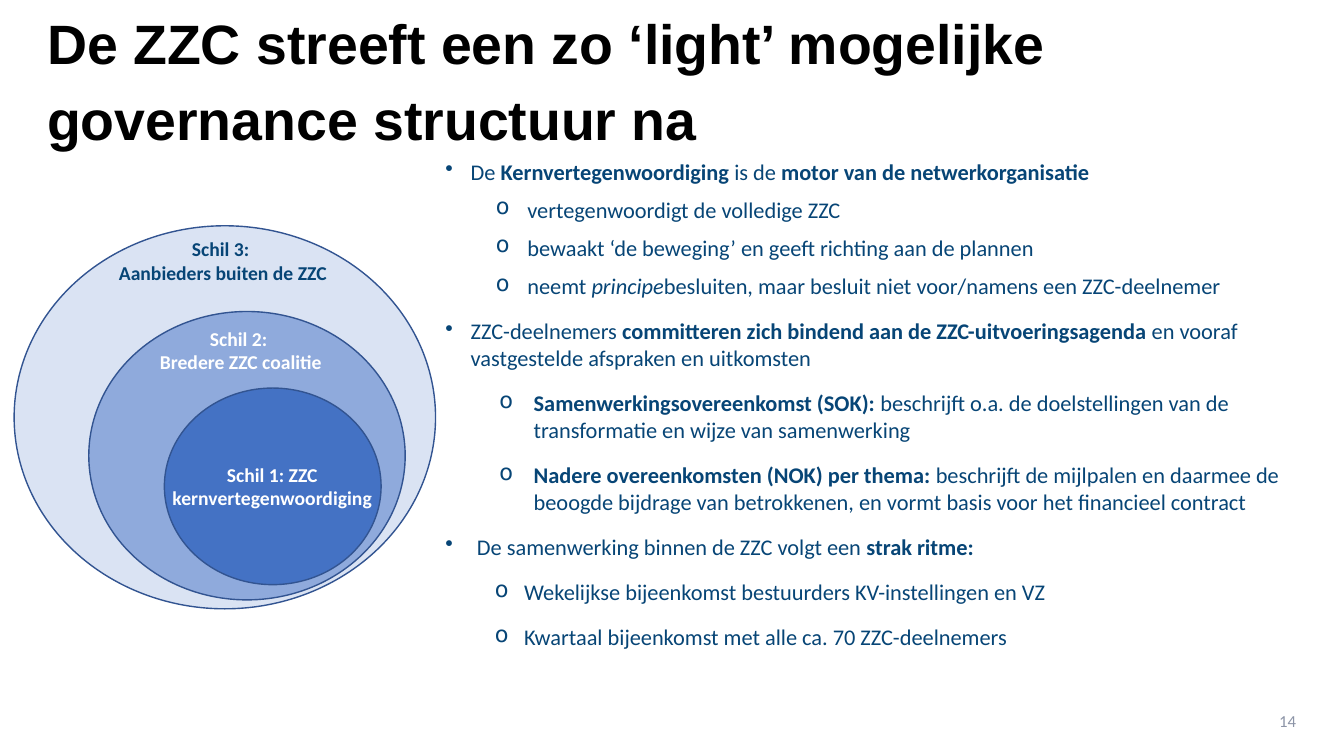
"""Build the governance slide with three nested shells and an agreement list."""
from dataclasses import dataclass

import pptx
import pptx.dml.color
import pptx.enum.shapes
import pptx.enum.text
import pptx.oxml.ns
import pptx.util
from lxml import etree

Pt = pptx.util.Pt
ALIGN = pptx.enum.text.PP_ALIGN
ANCHOR = pptx.enum.text.MSO_ANCHOR


@dataclass(frozen=True)
class Theme:
    """Colours, fonts and type sizes of the slide."""
    title_font: str = "Arial"
    body_font: str = "Calibri"
    black: str = "000000"
    white: str = "FFFFFF"
    navy: str = "074576"
    grey: str = "8C94A7"
    outline: str = "325491"
    outer: str = "DAE3F3"
    middle: str = "8FAADC"
    core: str = "4472C4"
    title_size: float = 39.6
    body_size: float = 16
    label_size: float = 14
    number_size: float = 12


THEME = Theme()

SHELLS = [
    ((0, 0, 301, 273.6), THEME.outer),
    ((53.3, 61.2, 226, 206), THEME.middle),
    ((107.3, 115.9, 154.8, 140.4), THEME.core),
]
SHELL_LABELS = [
    ((103.7, 165.6, 161.3, 41), "Schil 1: ZZC kernvertegenwoordiging", THEME.white),
    ((73.4, 68.4, 177.1, 41), "Schil 2: \vBredere ZZC coalitie", THEME.white),
    ((41.8, 4.3, 214.6, 41), "Schil 3: \vAanbieders buiten de ZZC", THEME.navy),
]

MAIN = ("•", 18, 18, 10)
MAIN_WIDE = ("•", 22.5, 22.5, 10)
ROLE = ("o", 58.5, 22.5, 5)
AGREEMENT = ("o", 63, 24.5, 10)
MEETING = ("o", 56.25, 21, 10)

POINTS = [
    (MAIN, [("De ", ""), ("Kernvertegenwoordiging", "bold"), (" is de ", ""),
            ("motor van de netwerkorganisatie", "bold")]),
    (ROLE, [("vertegenwoordigt de volledige ZZC", "")]),
    (ROLE, [("bewaakt ‘de beweging’ en geeft richting aan de plannen", "")]),
    (ROLE, [("neemt ", ""), ("principe", "italic"),
            ("besluiten, maar besluit niet voor/namens een ZZC-deelnemer", "")]),
    (MAIN, [("ZZC-deelnemers ", ""),
            ("committeren zich bindend aan de ZZC-uitvoeringsagenda ", "bold"),
            ("en vooraf vastgestelde afspraken en uitkomsten", "")]),
    (AGREEMENT, [("Samenwerkingsovereenkomst (SOK): ", "bold"),
                 ("beschrijft o.a. de doelstellingen van de transformatie "
                  "en wijze van samenwerking", "")]),
    (AGREEMENT, [("Nadere overeenkomsten (NOK) per thema: ", "bold"),
                 ("beschrijft de mijlpalen en daarmee de beoogde bijdrage van betrokkenen, "
                  "en vormt basis voor het financieel contract", "")]),
    (MAIN_WIDE, [("De samenwerking binnen de ZZC volgt een ", ""), ("strak ritme:", "bold")]),
    (MEETING, [("Wekelijkse bijeenkomst bestuurders KV-instellingen en VZ", "")]),
    (MEETING, [("Kwartaal bijeenkomst met alle ca. 70 ZZC-deelnemers", "")]),
]


def rgb(value):
    """Turn a hex string into a colour."""
    return pptx.dml.color.RGBColor.from_string(value)


def set_font(paragraph, name, size, colour, bold=False):
    """Set the shared font of a paragraph."""
    font = paragraph.font
    font.name, font.size, font.bold = name, Pt(size), bold
    font.color.rgb = rgb(colour)


def add_frame(slide, box, anchor=ANCHOR.MIDDLE):
    """Add a wrapping text box and return its text frame."""
    frame = slide.shapes.add_textbox(*map(Pt, box)).text_frame
    frame.word_wrap = True
    frame.vertical_anchor = anchor
    return frame


def add_line(slide, box, text, align, *font, bold=False):
    """Add a text box with one paragraph and return the paragraph."""
    paragraph = add_frame(slide, box).paragraphs[0]
    paragraph.text = text
    paragraph.alignment = align
    set_font(paragraph, *font, bold=bold)
    return paragraph


def add_title(slide, box):
    """Add the two-line slide title."""
    text = "De ZZC streeft een zo ‘light’ mogelijke \vgovernance structuur na"
    paragraph = add_line(slide, box, text, ALIGN.LEFT, THEME.title_font,
                         THEME.title_size, THEME.black, bold=True)
    paragraph.line_spacing = 1.14


def add_shells(slide, box):
    """Draw the nested shells and their labels from the corner of the box."""
    left, top = box[:2]
    for (x, y, width, height), fill in SHELLS:
        shell = slide.shapes.add_shape(pptx.enum.shapes.MSO_SHAPE.OVAL,
                                       Pt(left + x), Pt(top + y), Pt(width), Pt(height))
        shell.shadow.inherit = False
        shell.fill.solid()
        shell.fill.fore_color.rgb = rgb(fill)
        shell.line.color.rgb = rgb(THEME.outline)
        shell.line.width = Pt(1)
    for (x, y, width, height), text, colour in SHELL_LABELS:
        add_line(slide, (left + x, top + y, width, height), text, ALIGN.CENTER,
                 THEME.body_font, THEME.label_size, colour, bold=True)


def set_bullet(paragraph, character, indent, hanging):
    """Give a paragraph a bullet with a hanging indent."""
    properties = paragraph._p.get_or_add_pPr()
    properties.set("marL", str(int(Pt(indent))))
    properties.set("indent", str(-int(Pt(hanging))))
    bullet = etree.SubElement(properties, pptx.oxml.ns.qn("a:buChar"))
    bullet.set("char", character)


def add_points(slide, box):
    """Fill the box with the bulleted agreements."""
    frame = add_frame(slide, box, ANCHOR.TOP)
    frame.margin_left = frame.margin_right = frame.margin_top = frame.margin_bottom = 0
    for index, ((character, indent, hanging, before), parts) in enumerate(POINTS):
        paragraph = frame.add_paragraph() if index else frame.paragraphs[0]
        set_bullet(paragraph, character, indent, hanging)
        paragraph.space_before = Pt(before if index else 0)
        paragraph.space_after = Pt(3)
        set_font(paragraph, THEME.body_font, THEME.body_size, THEME.navy)
        for text, style in parts:
            run = paragraph.add_run()
            run.text = text
            if style:
                setattr(run.font, style, True)


def add_slide_number(slide, box):
    """Add the slide number at the right of the box."""
    add_line(slide, box, "14", ALIGN.RIGHT, THEME.body_font, THEME.number_size, THEME.grey)


def main():
    """Build and save the presentation."""
    presentation = pptx.Presentation()
    presentation.slide_width, presentation.slide_height = Pt(960), Pt(540)
    slide = presentation.slides.add_slide(presentation.slide_layouts[6])
    add_title(slide, (26.6, 13, 900, 82))
    add_shells(slide, (10.1, 161.3, 301, 273.6))
    add_points(slide, (318.2, 113, 612.7, 378))
    add_slide_number(slide, (717, 500.4, 216, 28.8))
    presentation.save("out.pptx")


if __name__ == "__main__":
    main()
